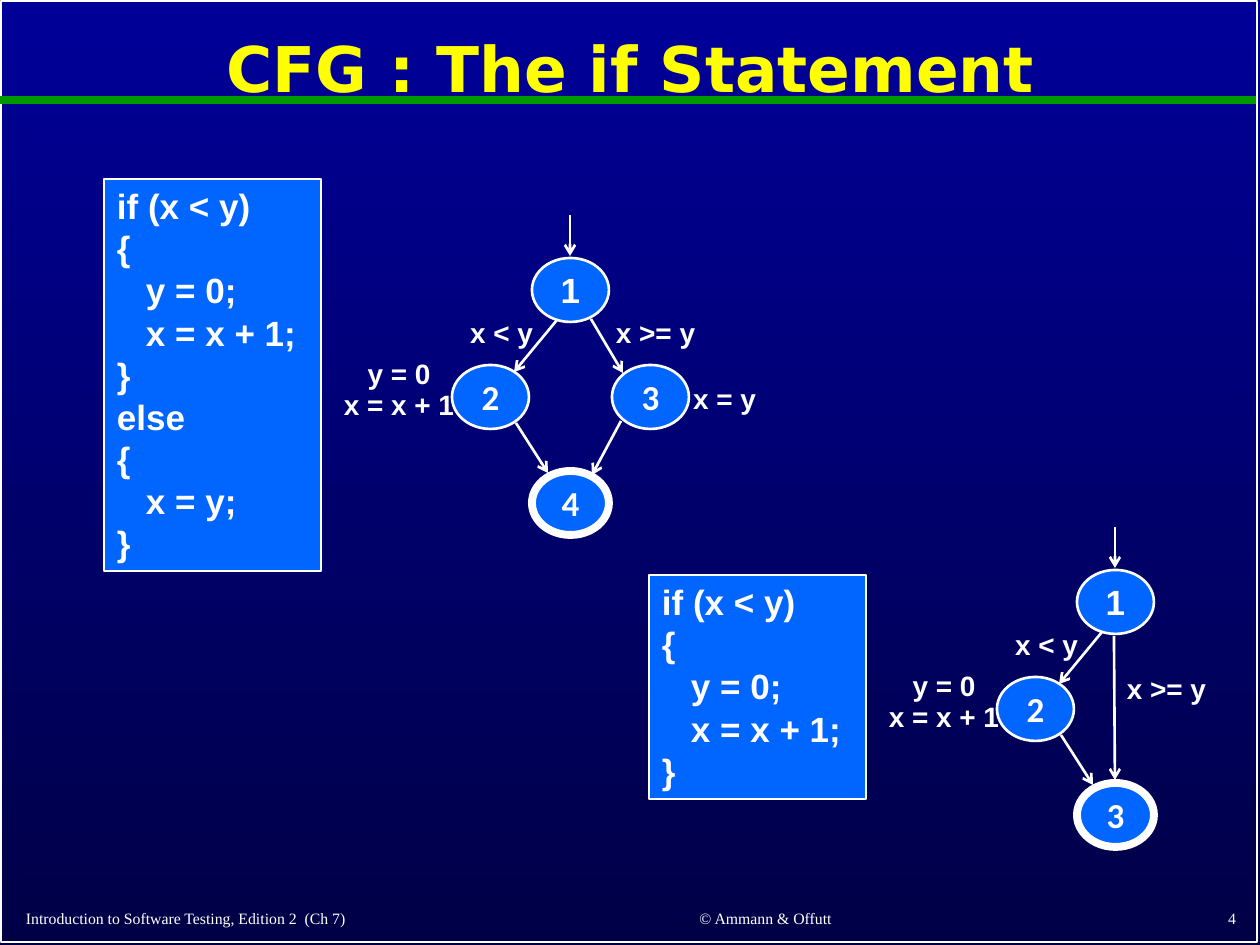
import pptx
import pptx.util
import pptx.dml.color
import pptx.enum.shapes
import pptx.enum.text
import pptx.oxml.ns
import lxml.etree

SCALE = 914400 / 126
RGBColor = pptx.dml.color.RGBColor
WHITE = RGBColor(255, 255, 255)
YELLOW = RGBColor(255, 255, 0)
GREEN = RGBColor(0, 153, 0)
BLUE = RGBColor(0, 102, 255)
NAVY_TOP = RGBColor(0, 0, 153)
NAVY_BOTTOM = RGBColor(0, 0, 70)
SHAPES = pptx.enum.shapes.MSO_SHAPE
ALIGN = pptx.enum.text.PP_ALIGN
ANCHOR = pptx.enum.text.MSO_ANCHOR

deck = pptx.Presentation()
deck.slide_width, deck.slide_height = round(1260 * SCALE), round(945 * SCALE)
page = deck.slides.add_slide(deck.slide_layouts[5])
backdrop = page.background.fill
backdrop.gradient()
backdrop.gradient_angle = 270
for stop, color in zip(backdrop.gradient_stops, (NAVY_TOP, NAVY_BOTTOM)):
    stop.color.rgb = color


def add_text(text, area, box=None, shape=None, fill=None, outline=1, size=16,
             font="Arial", color=WHITE, bold=True, align=ALIGN.CENTER,
             anchor=ANCHOR.MIDDLE, inset=(13, 6), spacing=None, before=0):
    """Fill a box, a preset shape or a new text box; leading spaces become an indent."""
    left, top, width, height = [round(length * SCALE) for length in area]
    if shape is not None:
        box = page.shapes.add_shape(shape, left, top, width, height)
        box.shadow.inherit = False
        box.line.color.rgb = WHITE
        box.line.width = pptx.util.Pt(outline)
        if fill is None:
            box.fill.background()
        else:
            box.fill.solid()
            box.fill.fore_color.rgb = fill
    elif box is None:
        box = page.shapes.add_textbox(left, top, width, height)
    box.left, box.top, box.width, box.height = left, top, width, height
    frame = box.text_frame
    frame.word_wrap = True
    frame.auto_size = pptx.enum.text.MSO_AUTO_SIZE.NONE
    frame.vertical_anchor = anchor
    frame.margin_left = frame.margin_right = round(inset[0] * SCALE)
    frame.margin_top = frame.margin_bottom = round(inset[1] * SCALE)
    for index, line in enumerate(text.split("\n")):
        para = frame.paragraphs[0] if index == 0 else frame.add_paragraph()
        para.alignment = align
        para.line_spacing = spacing
        para.space_before = pptx.util.Pt(before)
        if line.startswith(" "):
            para._p.get_or_add_pPr().set("marL", str(round(29 * SCALE)))
        span = para.add_run()
        span.text = line.strip()
        span.font.name, span.font.size = font, pptx.util.Pt(size)
        span.font.bold, span.font.color.rgb = bold, color


def add_line(start, end, color=WHITE, width=1.5, arrow=True):
    line = page.shapes.add_connector(
        pptx.enum.shapes.MSO_CONNECTOR.STRAIGHT,
        *[round(length * SCALE) for length in (*start, *end)])
    line.line.color.rgb = color
    line.line.width = pptx.util.Pt(width)
    if arrow:
        lxml.etree.SubElement(line.line._get_or_add_ln(),
                              pptx.oxml.ns.qn("a:tailEnd"), type="arrow")
    lxml.etree.SubElement(line._element.spPr, pptx.oxml.ns.qn("a:effectLst"))


# Frame, rule, title and footer
add_text("", (1, 1, 1256, 941), shape=SHAPES.RECTANGLE)
add_line((0, 100), (1256, 100), color=GREEN, width=4.5, arrow=False)
add_text("CFG : The if Statement", (10, 14, 1241, 116), box=page.shapes.title,
         size=36, font="DejaVu Sans", color=YELLOW, spacing=0.9)
for text, area, align in (
        ("Introduction to Software Testing, Edition 2  (Ch 7)", (13, 902, 518, 33), ALIGN.LEFT),
        ("© Ammann & Offutt", (566, 902, 399, 33), ALIGN.CENTER),
        ("4", (987, 901, 262, 34), ALIGN.RIGHT)):
    add_text(text, area, size=9, font="Times New Roman", bold=False, align=align)

# Code listings
IF_CODE = "if (x < y)\n{\n   y = 0;\n   x = x + 1;\n}"
ELSE_CODE = "\nelse\n{\n   x = y;\n}"
for code, area in ((IF_CODE + ELSE_CODE, (104, 179, 217, 392)),
                   (IF_CODE, (649, 575, 217, 224))):
    add_text(code, area, shape=SHAPES.RECTANGLE, fill=BLUE, size=20,
             align=ALIGN.LEFT, anchor=ANCHOR.TOP)

# Control flow graphs: the second repeats the first, shifted, without the else node
for x, y, has_else in ((570, 290, True), (1115, 602, False)):
    nodes = [("1", 0, 0, "Arial", 1.5), ("2", -80, 107, "Calibri", 1.5),
             ("4" if has_else else "3", 0, 213, "Calibri", 4.5)]
    edges = [((0, -75), (0, -34)), ((-13, 30), (-56, 82)), ((-54, 133), (-22, 183))]
    labels = [("x < y", -69, 42)]
    if has_else:
        nodes.append(("3", 80, 107, "Calibri", 1.5))
        edges += [((21, 29), (53, 83)), ((51, 131), (22, 185))]
        labels += [("x >= y", 85, 42), ("x = y", 154, 108)]
    else:
        edges.append(((-1, 34), (0, 178)))
        labels.append(("x >= y", 51, 86))
    for name, dx, dy, font, outline in nodes:
        add_text(name, (x + dx - 38, y + dy - 32, 77, 64), shape=SHAPES.OVAL,
                 fill=BLUE, outline=outline, size=20, font=font, inset=(0, 0))
    for (start_x, start_y), (end_x, end_y) in edges:
        add_line((x + start_x, y + start_y), (x + end_x, y + end_y))
    for text, dx, dy in labels:
        add_text(text, (x + dx - 58, y + dy - 23, 117, 47))
    add_text("y = 0\nx = x + 1", (x - 243, y + 75, 144, 64),
             anchor=ANCHOR.TOP, spacing=0.5, before=8)

deck.save("out.pptx")
